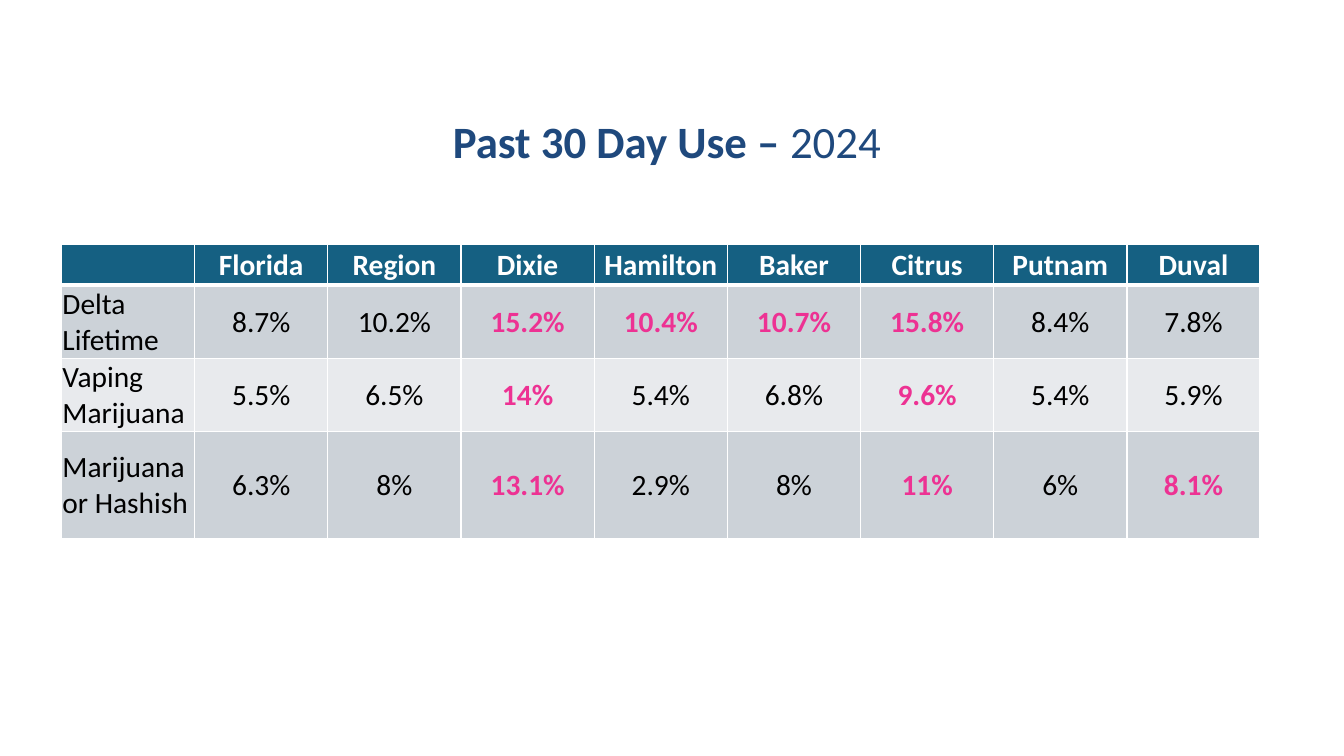
from lxml.etree import SubElement
from pptx import Presentation
from pptx.dml.color import RGBColor
from pptx.enum.text import MSO_ANCHOR, PP_ALIGN
from pptx.oxml.ns import qn
from pptx.util import Inches, Pt

COLORS = {
    "title": "1F497D",
    "header": "156082",
    "header_text": "FFFFFF",
    "band_dark": "CCD2D8",
    "band_light": "E8EAED",
    "border": "FFFFFF",
    "text": "000000",
    "highlight": "ED3293",
}
FONT = "Calibri"

# A trailing * marks a highlighted rate; a line break starts a new paragraph
USE_RATES = [
    ["", "Florida", "Region", "Dixie", "Hamilton", "Baker", "Citrus", "Putnam", "Duval"],
    ["Delta\nLifetime", "8.7%", "10.2%", "15.2%*", "10.4%*", "10.7%*", "15.8%*", "8.4%", "7.8%"],
    ["Vaping Marijuana", "5.5%", "6.5%", "14%*", "5.4%", "6.8%", "9.6%*", "5.4%", "5.9%"],
    ["Marijuana or Hashish", "6.3%", "8%", "13.1%*", "2.9%", "8%", "11%*", "6%", "8.1%*"],
]
ROW_HEIGHTS = [0.41, 0.72, 0.72, 1.07]
TABLE_WIDTH = 11.89

CELL_FORMAT = {
    "vertical_anchor": MSO_ANCHOR.MIDDLE,
    "margin_left": Inches(0.01),
    "margin_top": Inches(0.01),
    "margin_right": Inches(0.01),
    "margin_bottom": 0,
}


def rgb(name):
    return RGBColor.from_string(COLORS[name])


def add_text(paragraph, text, size, color, bold):
    run = paragraph.add_run()
    run.text = text
    for attribute, value in {"name": FONT, "size": Pt(size), "bold": bold}.items():
        setattr(run.font, attribute, value)
    run.font.color.rgb = rgb(color)


def add_borders(cell, bottom_width):
    properties = cell._tc.get_or_add_tcPr()
    widths = {"a:lnL": 1, "a:lnR": 1, "a:lnT": 1, "a:lnB": bottom_width}
    for side, width in widths.items():
        border = SubElement(properties, qn(side), w=str(Pt(width)))
        solid = SubElement(border, qn("a:solidFill"))
        SubElement(solid, qn("a:srgbClr"), val=COLORS["border"])


def fill_cell(cell, text, row, column):
    header, highlighted = row == 0, text.endswith("*")
    for attribute, value in CELL_FORMAT.items():
        setattr(cell, attribute, value)

    # Borders come before the fill in the cell properties
    add_borders(cell, 3 if header else 1)
    band = "header" if header else "band_dark" if row % 2 else "band_light"
    cell.fill.solid()
    cell.fill.fore_color.rgb = rgb(band)

    color = "header_text" if header else "highlight" if highlighted else "text"
    lines = text.rstrip("*").split("\n") if text else []
    for index, line in enumerate(lines):
        frame = cell.text_frame
        paragraph = frame.add_paragraph() if index else frame.paragraphs[0]
        paragraph.alignment = PP_ALIGN.CENTER if column else PP_ALIGN.LEFT
        add_text(paragraph, line, 21, color, header or highlighted)


def add_rates_table(slide):
    rates = slide.shapes.add_table(
        len(USE_RATES), len(USE_RATES[0]),
        Inches(0.61), Inches(2.42), Inches(TABLE_WIDTH), Inches(sum(ROW_HEIGHTS)),
    ).table
    for county in rates.columns:
        county.width = Inches(TABLE_WIDTH / len(USE_RATES[0]))
    for row, (height, texts) in enumerate(zip(ROW_HEIGHTS, USE_RATES)):
        rates.rows[row].height = Inches(height)
        for column, text in enumerate(texts):
            fill_cell(rates.cell(row, column), text, row, column)


def add_title(slide):
    title = slide.shapes.add_textbox(Inches(1.53), Inches(1.08), Inches(10.27), Inches(0.64))
    title.text_frame.word_wrap = True
    heading = title.text_frame.paragraphs[0]
    heading.alignment = PP_ALIGN.CENTER
    add_text(heading, "Past 30 Day Use – ", 32, "title", True)
    add_text(heading, "2024 ", 32, "title", False)


def main():
    presentation = Presentation()
    presentation.slide_width = Inches(13.33)
    presentation.slide_height = Inches(7.5)
    slide = presentation.slides.add_slide(presentation.slide_layouts[6])
    add_rates_table(slide)
    add_title(slide)
    presentation.save("out.pptx")


if __name__ == "__main__":
    main()
